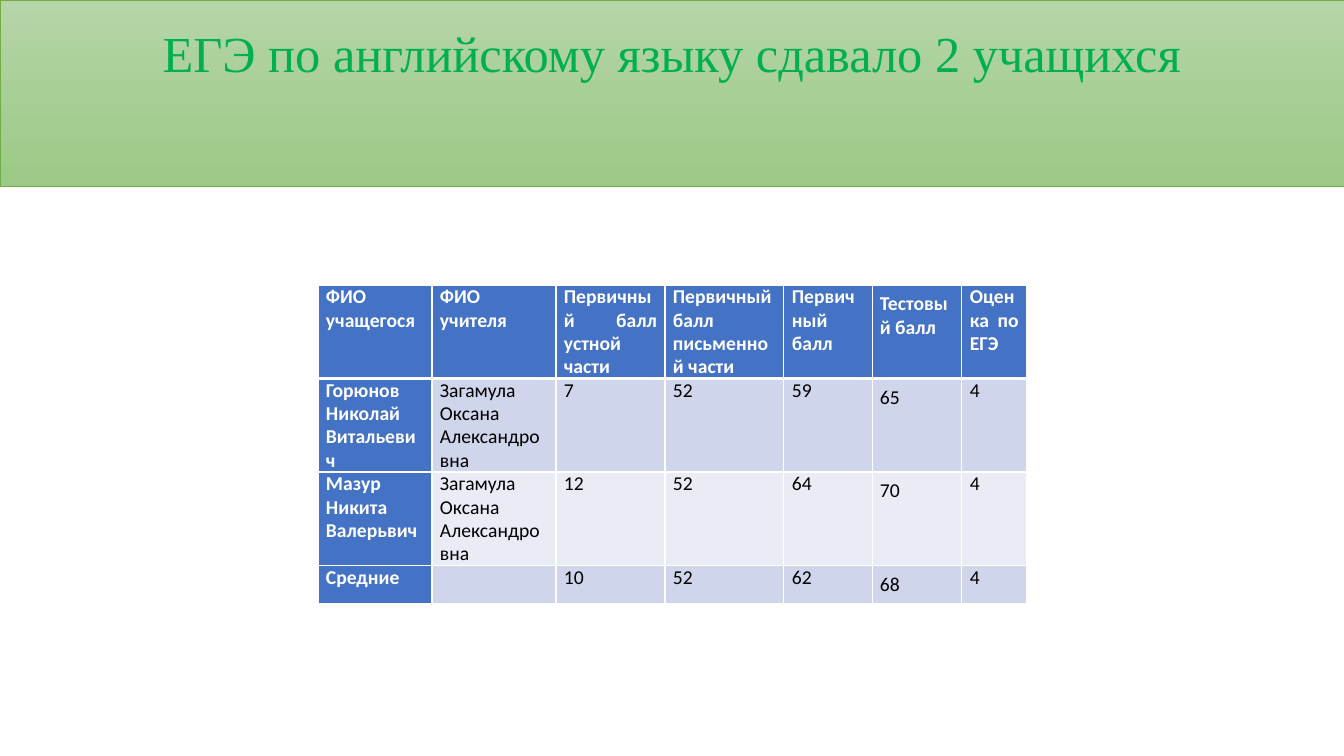
import pptx
import pptx.dml.color
import pptx.enum.text
import pptx.util
import pptx.oxml

EMU_PER_PX = 914400 / 100.8
RGBColor = pptx.dml.color.RGBColor
ALIGN = pptx.enum.text.PP_ALIGN
ANCHOR = pptx.enum.text.MSO_ANCHOR

WHITE = RGBColor(0xFF, 0xFF, 0xFF)
BLACK = RGBColor(0x00, 0x00, 0x00)
TITLE_GREEN = RGBColor(0x00, 0xB0, 0x50)
BANNER_LINE = RGBColor(0x70, 0xAD, 0x47)
BANNER_TOP = RGBColor(0xB5, 0xD5, 0xA7)
BANNER_BOTTOM = RGBColor(0x9C, 0xC9, 0x87)
HEADER_BLUE = RGBColor(0x44, 0x72, 0xC4)
BANDS = [RGBColor(0xCF, 0xD5, 0xEA), RGBColor(0xE9, 0xEB, 0xF5)]


def px(length):
    return pptx.util.Emu(round(length * EMU_PER_PX))


def write_text(paragraph, text, *, font, size, color, align, spacing, bold=False, after=0):
    paragraph.alignment = align
    paragraph.line_spacing = spacing
    paragraph.space_after = pptx.util.Pt(after)
    run = paragraph.add_run()
    run.text = text
    run.font.name = font
    run.font.size = pptx.util.Pt(size)
    run.font.bold = bold
    run.font.color.rgb = color


presentation = pptx.Presentation()
presentation.slide_width = px(1344)
presentation.slide_height = px(756)
slide = presentation.slides.add_slide(presentation.slide_layouts[5])

# Title banner
title = slide.shapes.title
title.left, title.top, title.width, title.height = px(0), px(0), px(1344), px(186)
title.fill.gradient()
title.fill.gradient_angle = 270
for stop, color in zip(title.fill.gradient_stops, [BANNER_TOP, BANNER_BOTTOM]):
    stop.color.rgb = color
title.line.color.rgb = BANNER_LINE
title.line.width = pptx.util.Pt(0.5)
frame = title.text_frame
frame.word_wrap = True
frame.auto_size = pptx.enum.text.MSO_AUTO_SIZE.NONE
frame.vertical_anchor = ANCHOR.MIDDLE
write_text(frame.paragraphs[0], "ЕГЭ по английскому языку сдавало 2 учащихся",
           font="Times New Roman", size=36, color=TITLE_GREEN, align=ALIGN.CENTER, spacing=0.9)
frame.paragraphs[0].add_line_break()

# Results table
results = [
    ["ФИО учащегося", "ФИО учителя", "Первичный балл устной части",
     "Первичный балл письменной части", "Первичный балл", "Тестовый балл", "Оценка по ЕГЭ"],
    ["Горюнов Николай Витальевич", "Загамула Оксана Александровна", "7", "52", "59", "65", "4"],
    ["Мазур Никита Валерьвич", "Загамула Оксана Александровна", "12", "52", "64", "70", "4"],
    ["Средние", "", "10", "52", "62", "68", "4"],
]
column_widths = [114, 124, 109, 119, 89, 89, 65]
row_heights = [93, 93, 93, 38]
TEST_SCORE_COLUMN = 5

table = slide.shapes.add_table(len(row_heights), len(column_widths), px(318), px(285),
                               px(sum(column_widths)), px(sum(row_heights))).table
table.first_col = True
for column, width in zip(table.columns, column_widths):
    column.width = px(width)
for row, height in zip(table.rows, row_heights):
    row.height = px(height)

for row_index, texts in enumerate(results):
    for column_index, text in enumerate(texts):
        cell = table.cell(row_index, column_index)
        is_heading = row_index == 0 or column_index == 0

        # White borders, thicker under the header row
        border_points = {"lnL": 1, "lnR": 1, "lnT": 3 if row_index == 1 else 1,
                         "lnB": 3 if row_index == 0 else 1}
        properties = cell._tc.get_or_add_tcPr()
        for side, points in border_points.items():
            properties.append(pptx.oxml.parse_xml(
                f'<a:{side} xmlns:a="http://schemas.openxmlformats.org/drawingml/2006/main" '
                f'w="{pptx.util.Pt(points)}"><a:solidFill><a:srgbClr val="{WHITE}"/>'
                f'</a:solidFill></a:{side}>'))

        cell.fill.solid()
        cell.fill.fore_color.rgb = HEADER_BLUE if is_heading else BANDS[(row_index - 1) % 2]
        cell.vertical_anchor = ANCHOR.TOP
        is_test_score = column_index == TEST_SCORE_COLUMN
        cell.margin_left = cell.margin_right = px(7 if is_test_score else 8)
        cell.margin_top = cell.margin_bottom = px(7 if is_test_score else 0)
        if text:
            is_first_student = (row_index, column_index) == (1, 0)
            write_text(cell.text_frame.paragraphs[0], text, font="Calibri", size=14,
                       color=WHITE if is_heading else BLACK, bold=is_heading,
                       align=ALIGN.LEFT if is_first_student else ALIGN.JUSTIFY,
                       spacing=0.98, after=7.5)

presentation.save("out.pptx")
